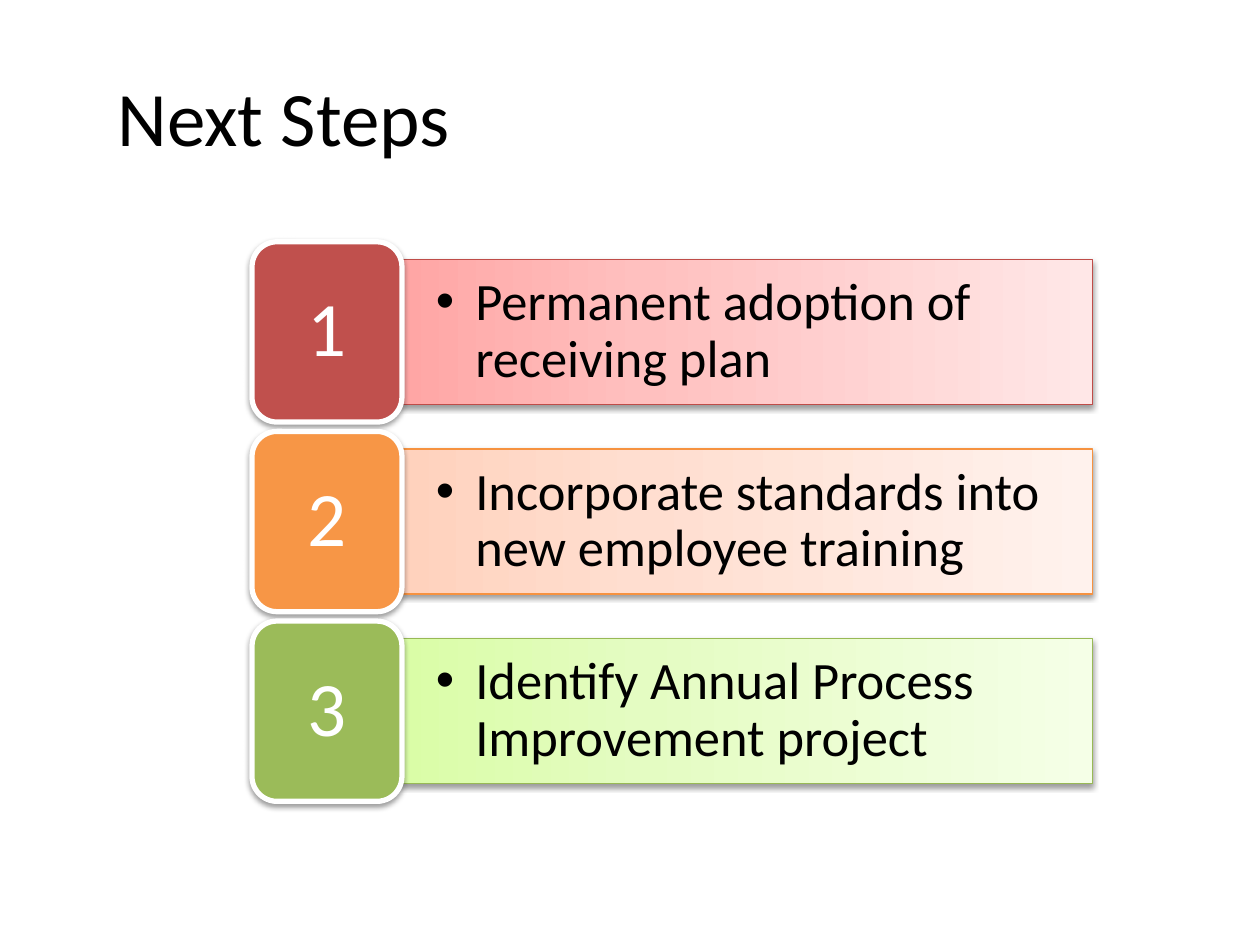
from copy import deepcopy
from dataclasses import dataclass

from lxml.etree import SubElement
from pptx import Presentation
from pptx.dml.color import RGBColor
from pptx.enum.shapes import MSO_SHAPE as Preset
from pptx.enum.text import MSO_ANCHOR as Anchor, PP_ALIGN as Align
from pptx.oxml.ns import qn
from pptx.shapes.autoshape import Shape
from pptx.util import Pt

COLOURS = {
    "text": "000000", "white": "FFFFFF", "shadow": "000000",
    "red": "C0504D", "red edge": "BF4C48",
    "orange": "F79646", "orange edge": "F69240",
    "green": "9BBB59", "green edge": "98B955",
}
GRADIENTS = {
    "red": ("FFA6A5", "FFC0BF", "FFE7E7"),
    "orange": ("FFD2BD", "FFDED0", "FFF2ED"),
    "green": ("DAFDA7", "E4FCC2", "F5FFE7"),
}
STOPS = (0, 0.35, 1)
FONT = "Calibri"
FIRST_TOP, PITCH = 138.2, 108.36
BADGE_LEFT, BADGE_WIDTH, BADGE_HEIGHT = 144, 85.7, 103
BAR_WIDTH, BAR_HEIGHT = 394.5, 82.8
HANGING = 22.5


@dataclass
class Step:
    number: int
    action: str
    hue: str


STEPS = [
    Step(1, "Permanent adoption of receiving plan", "red"),
    Step(2, "Incorporate standards into new employee training", "orange"),
    Step(3, "Identify Annual Process Improvement project", "green"),
]


def rgb(name: str) -> RGBColor:
    return RGBColor.from_string(COLOURS[name])


def write(shape: Shape, text: str, size: float, colour: str, align: Align,
          side_inset: float, line_spacing: float) -> None:
    frame = shape.text_frame
    frame.text = text
    frame.word_wrap = True
    frame.vertical_anchor = Anchor.MIDDLE
    frame.margin_left = frame.margin_right = Pt(side_inset)
    paragraph = frame.paragraphs[0]
    paragraph.alignment = align
    paragraph.line_spacing = line_spacing
    font = paragraph.runs[0].font
    font.name, font.size = FONT, Pt(size)
    font.color.rgb = rgb(colour)


def outline(shape: Shape, colour: str, width: float) -> None:
    shape.line.color.rgb = rgb(colour)
    shape.line.width = Pt(width)


def drop_shadow(shape: Shape) -> None:
    shape.shadow.inherit = False
    effects = shape._element.spPr.find(qn("a:effectLst"))
    outer = SubElement(effects, qn("a:outerShdw"), blurRad=str(Pt(3.1)),
                       dist=str(Pt(1.6)), dir="5400000", rotWithShape="0")
    tint = SubElement(outer, qn("a:srgbClr"), val=COLOURS["shadow"])
    SubElement(tint, qn("a:alpha"), val="38000")


def fill_gradient(shape: Shape, hue: str) -> None:
    """Fill from left to right with the three stops of the hue."""
    shape.fill.gradient()
    shape.fill.gradient_angle = 0
    stop_list = shape._element.spPr.find(".//" + qn("a:gsLst"))
    stop_list.append(deepcopy(stop_list[-1]))
    for stop, position, colour in zip(shape.fill.gradient_stops, STOPS, GRADIENTS[hue]):
        stop.position = position
        stop.color.rgb = RGBColor.from_string(colour)


def add_bullet(shape: Shape) -> None:
    properties = shape.text_frame.paragraphs[0]._p.get_or_add_pPr()
    properties.set("marL", str(Pt(HANGING)))
    properties.set("indent", str(-Pt(HANGING)))
    SubElement(properties, qn("a:buFont"), typeface="Arial")
    SubElement(properties, qn("a:buChar"), char="•")


def draw_step(slide, step: Step, top: float) -> None:
    bar = slide.shapes.add_shape(
        Preset.RECTANGLE, Pt(BADGE_LEFT + BADGE_WIDTH),
        Pt(top + (BADGE_HEIGHT - BAR_HEIGHT) / 2), Pt(BAR_WIDTH), Pt(BAR_HEIGHT))
    fill_gradient(bar, step.hue)
    outline(bar, f"{step.hue} edge", 0.75)
    drop_shadow(bar)
    write(bar, step.action, 30, "text", Align.LEFT, 19.4, 0.9)
    add_bullet(bar)

    badge = slide.shapes.add_shape(
        Preset.ROUNDED_RECTANGLE, Pt(BADGE_LEFT), Pt(top), Pt(BADGE_WIDTH), Pt(BADGE_HEIGHT))
    badge.fill.solid()
    badge.fill.fore_color.rgb = rgb(step.hue)
    outline(badge, "white", 3)
    drop_shadow(badge)
    write(badge, str(step.number), 44, "white", Align.CENTER, 13, 0.9)


def main() -> None:
    deck = Presentation()
    deck.slide_width, deck.slide_height = Pt(720), Pt(540)
    slide = deck.slides.add_slide(deck.slide_layouts[6])
    title = slide.shapes.add_textbox(Pt(60), Pt(21), Pt(636), Pt(90))
    write(title, "Next Steps", 44, "text", Align.LEFT, 7.2, 1)
    for row, step in enumerate(STEPS):
        draw_step(slide, step, FIRST_TOP + row * PITCH)
    deck.save("out.pptx")


if __name__ == "__main__":
    main()
